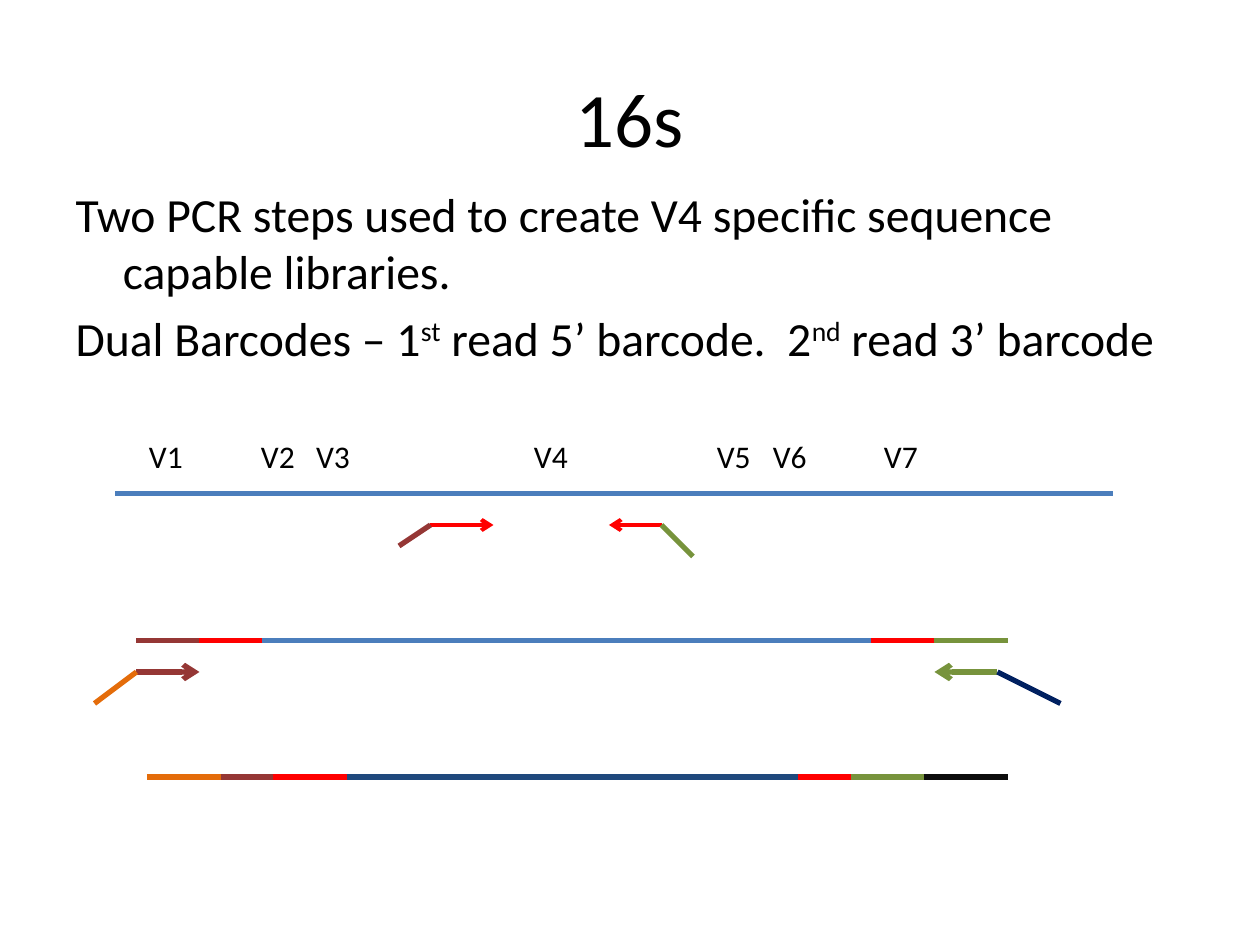
from dataclasses import dataclass

import pptx
import pptx.dml.color
import pptx.enum.shapes
import pptx.enum.text
import pptx.oxml
import pptx.oxml.ns
import pptx.util
from lxml import etree

Pt = pptx.util.Pt
qn = pptx.oxml.ns.qn


@dataclass(frozen=True)
class Theme:
    font: str = "Calibri"
    title_size: float = 44
    body_size: float = 27.2
    label_size: float = 18
    line_width: float = 3
    thin_width: float = 2.25
    text: str = "000000"
    template: str = "4B7EBC"
    amplicon: str = "1F497D"
    primer: str = "FF0000"
    forward_adapter: str = "953735"
    reverse_adapter: str = "77933C"
    forward_barcode: str = "E46C0A"
    reverse_barcode: str = "002060"
    reverse_end: str = "0D0D0D"


class SlideBuilder:
    def __init__(self, slide, theme):
        self.slide = slide
        self.theme = theme

    def place(self, box, left, top, width, height):
        box.left, box.top, box.width, box.height = map(Pt, (left, top, width, height))

    def style_runs(self, paragraph, size):
        for run in paragraph.runs:
            run.font.name = self.theme.font
            run.font.size = Pt(size)
            run.font.color.rgb = pptx.dml.color.RGBColor.from_string(self.theme.text)

    def title(self, text, *bounds):
        heading = self.slide.shapes.title
        self.place(heading, *bounds)
        heading.text_frame.text = text
        heading.text_frame.auto_size = pptx.enum.text.MSO_AUTO_SIZE.NONE
        self.style_runs(heading.text_frame.paragraphs[0], self.theme.title_size)

    def body(self, statements, *bounds):
        """Each statement is a list of text pieces; every second piece is superscript."""
        body = self.slide.placeholders[1]
        self.place(body, *bounds)
        frame = body.text_frame
        frame.auto_size = pptx.enum.text.MSO_AUTO_SIZE.NONE
        for index, pieces in enumerate(statements):
            paragraph = frame.add_paragraph() if index else frame.paragraphs[0]
            etree.SubElement(paragraph._p.get_or_add_pPr(), qn("a:buNone"))
            for position, piece in enumerate(pieces):
                run = paragraph.add_run()
                run.text = piece
                if position % 2:
                    run._r.get_or_add_rPr().set("baseline", "30000")
            self.style_runs(paragraph, self.theme.body_size)

    def region_labels(self, labels, tab_stops, *bounds):
        box = self.slide.shapes.add_textbox(*map(Pt, bounds))
        box.text_frame.word_wrap = True
        box.text_frame.text = "\t".join(labels)
        paragraph = box.text_frame.paragraphs[0]
        tabs = etree.SubElement(paragraph._p.get_or_add_pPr(), qn("a:tabLst"))
        for stop in tab_stops:
            etree.SubElement(tabs, qn("a:tab"), pos=str(Pt(stop)), algn="l")
        self.style_runs(paragraph, self.theme.label_size)

    def line(self, start, end, color, width=None, arrow=False):
        connector = self.slide.shapes.add_connector(
            pptx.enum.shapes.MSO_CONNECTOR.STRAIGHT, *map(Pt, (*start, *end)))
        connector.line.color.rgb = pptx.dml.color.RGBColor.from_string(color)
        connector.line.width = Pt(width or self.theme.line_width)
        if arrow:
            etree.SubElement(connector.line._get_or_add_ln(), qn("a:tailEnd"), type="arrow")
        etree.SubElement(connector._element.spPr, qn("a:effectLst"))

    def strand(self, y, edges, colors):
        """Draw adjoining segments between consecutive x positions."""
        for left, right, color in zip(edges, edges[1:], colors):
            self.line((left, y), (right, y), color)

    def primer(self, joint, tip_x, overhang_end, color, overhang_color, width=None):
        """Draw an annealing arrow with an overhang that hangs from its joint."""
        self.line(joint, (tip_x, joint[1]), color, width, arrow=True)
        self.line(joint, overhang_end, overhang_color)


def main():
    presentation = pptx.Presentation()
    presentation.slide_width, presentation.slide_height = Pt(720), Pt(540)
    theme = Theme()
    slide = presentation.slides.add_slide(presentation.slide_layouts[1])
    builder = SlideBuilder(slide, theme)

    builder.title("16s", 36, 21.6, 648, 90)
    builder.body([
        ["Two PCR steps used to create V4 specific sequence capable libraries."],
        ["Dual Barcodes – 1", "st", " read 5’ barcode.  2", "nd", " read 3’ barcode"],
    ], 36, 102, 648, 96)

    # 16S gene and the first PCR primers
    builder.strand(282, [66, 636], [theme.template])
    builder.region_labels([f"V{number}" for number in range(1, 8)],
                          [64, 95.5, 220, 324.5, 356.5, 420], 78, 246, 516, 29)
    builder.primer((246, 300), 282, (228, 312),
                   theme.primer, theme.forward_adapter, theme.thin_width)
    builder.primer((378, 300), 348, (396, 318),
                   theme.primer, theme.reverse_adapter, theme.thin_width)

    # First product and the second PCR primers
    builder.strand(366, [78, 114, 150, 498, 534, 576],
                   [theme.forward_adapter, theme.primer, theme.template,
                    theme.primer, theme.reverse_adapter])
    builder.primer((78, 384), 114, (54, 402),
                   theme.forward_adapter, theme.forward_barcode)
    builder.primer((570, 384), 534, (606, 402),
                   theme.reverse_adapter, theme.reverse_barcode)

    # Finished library
    builder.strand(444, [84, 126, 156, 198, 456, 486, 528, 576],
                   [theme.forward_barcode, theme.forward_adapter, theme.primer,
                    theme.amplicon, theme.primer, theme.reverse_adapter,
                    theme.reverse_end])

    presentation.save("out.pptx")


if __name__ == "__main__":
    main()
